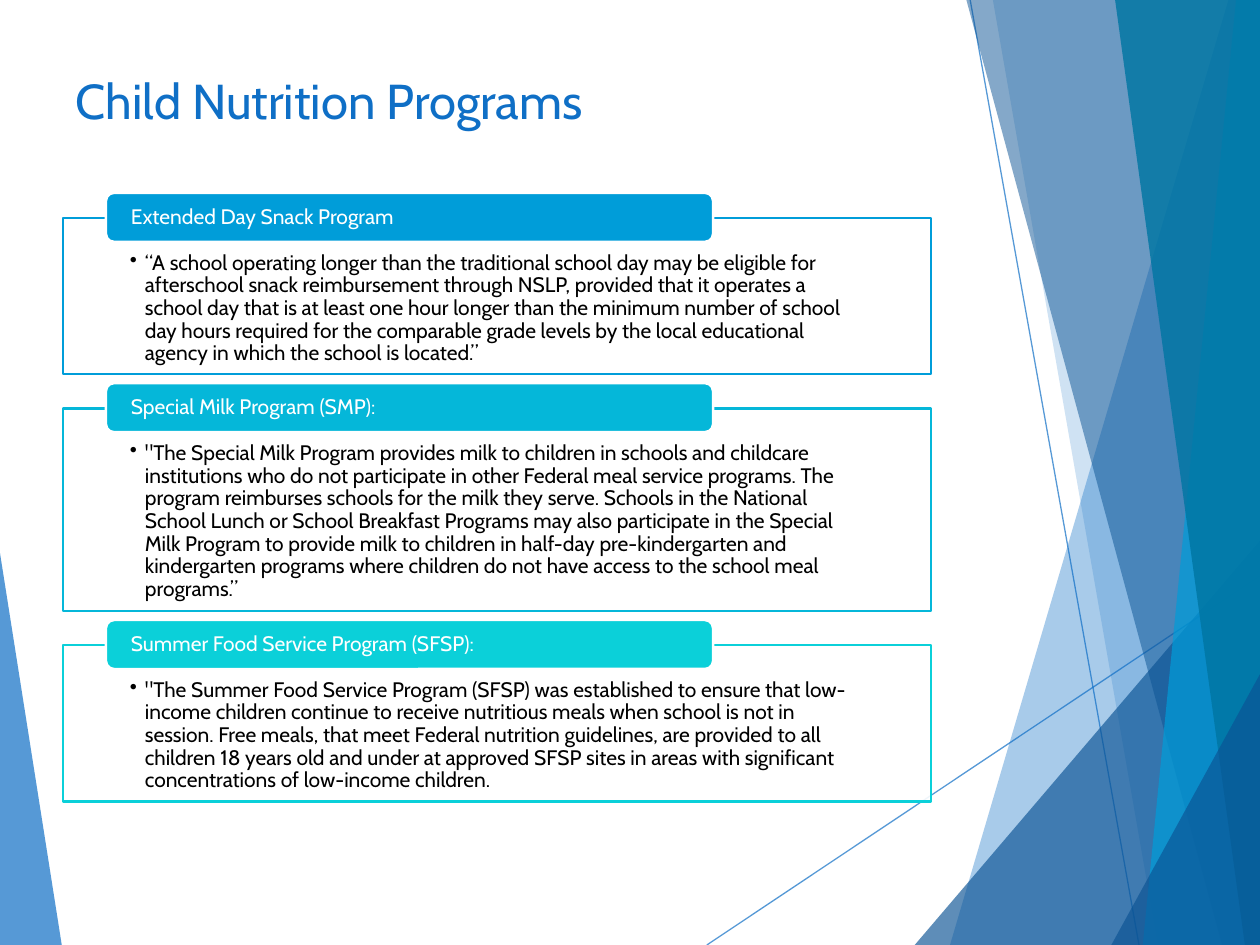
from dataclasses import dataclass

from lxml.etree import SubElement
from pptx import Presentation
from pptx.dml.color import RGBColor
from pptx.enum.shapes import MSO_CONNECTOR as Connector, MSO_SHAPE as Shape
from pptx.enum.text import MSO_ANCHOR as Anchor, PP_ALIGN as Align
from pptx.oxml.ns import qn
from pptx.util import Inches, Pt


@dataclass(frozen=True)
class Theme:
    """Colours, font and type sizes of the deck."""
    font: str = "Cabin"
    title_size: int = 28
    text_size: int = 12
    blue: str = "0F6FC6"
    navy: str = "0B5394"
    sky: str = "009DD9"
    teal: str = "0076A3"
    cyan: str = "05B7D9"
    aqua: str = "0BD0D9"
    white: str = "FFFFFF"
    black: str = "000000"


THEME = Theme()

FACETS = [
    (THEME.blue, 70, [(0, 4.39), (0.49, 7.5), (0, 7.5)]),
    (THEME.blue, 36, [(9.75, 0), (7.54, 7.5), (10, 7.5), (10, 0)]),
    (THEME.blue, 20, [(7.88, 0), (9.19, 7.5), (10, 7.5), (10, 0)]),
    (THEME.navy, 66, [(7.26, 7.5), (10, 4.29), (10, 7.5)]),
    (THEME.navy, 50, [(7.67, 0), (9.7, 7.5), (10, 7.5), (10, 0)]),
    (THEME.sky, 70, [(9.81, 0), (9.07, 7.5), (10, 7.5), (10, 0)]),
    (THEME.teal, 82, [(8.85, 0), (9.88, 7.5), (10, 7.5), (10, 0)]),
    (THEME.navy, 66, [(8.82, 7.5), (10, 5.35), (10, 7.5)]),
]
RAYS = [((5.61, 7.5), (10, 4.57)), ((7.7, 0), (9.04, 7.5))]

PROGRAMS = [
    (THEME.sky, 1.24, "Extended Day Snack Program",
     "“A school operating longer than the traditional school day may be eligible for "
     "afterschool snack reimbursement through NSLP, provided that it operates a school "
     "day that is at least one hour longer than the minimum number of school day hours "
     "required for the comparable grade levels by the local educational agency in which "
     "the school is located.”"),
    (THEME.cyan, 1.61, "Special Milk Program (SMP):",
     "\"The Special Milk Program provides milk to children in schools and childcare "
     "institutions who do not participate in other Federal meal service programs. The "
     "program reimburses schools for the milk they serve. Schools in the National School "
     "Lunch or School Breakfast Programs may also participate in the Special Milk Program "
     "to provide milk to children in half-day pre-kindergarten and kindergarten programs "
     "where children do not have access to the school meal programs.”"),
    (THEME.aqua, 1.24, "Summer Food Service Program (SFSP):",
     "\"The Summer Food Service Program (SFSP) was established to ensure that low-income "
     "children continue to receive nutritious meals when school is not in session. Free "
     "meals, that meet Federal nutrition guidelines, are provided to all children 18 years "
     "old and under at approved SFSP sites in areas with significant concentrations of "
     "low-income children."),
]


def set_alpha(fill_parent, percent):
    """Make the solid colour under an element partly transparent."""
    colour = next(fill_parent.iter(qn("a:srgbClr")))
    SubElement(colour, qn("a:alpha"), val=str(percent * 1000))


def write(frame, text, size=THEME.text_size, color=THEME.black, anchor=Anchor.MIDDLE,
          insets=(0.1, 0.05, 0.1, 0.05), spacing=None, bullet=False):
    """Write one formatted paragraph into a text frame."""
    frame.word_wrap = True
    frame.vertical_anchor = anchor
    (frame.margin_left, frame.margin_top,
     frame.margin_right, frame.margin_bottom) = map(Inches, insets)
    para = frame.paragraphs[0]
    para.alignment = Align.LEFT
    para.line_spacing = spacing
    if bullet:
        props = para._p.get_or_add_pPr()
        props.set("marL", str(Inches(0.12)))
        props.set("indent", str(-Inches(0.12)))
        SubElement(props, qn("a:buChar"), char="•")
    span = para.add_run()
    span.text = text
    span.font.name = THEME.font
    span.font.size = Pt(size)
    span.font.color.rgb = RGBColor.from_string(color)


class PageBuilder:
    """Holds the theme and the page being built."""

    def __init__(self, page, theme):
        """Keep the page and its theme."""
        self.page = page
        self.theme = theme

    def title(self, text, left, top, width, height):
        """Move and fill the title placeholder."""
        box = self.page.shapes.title
        box.left, box.top, box.width, box.height = map(Inches, (left, top, width, height))
        write(box.text_frame, text, size=self.theme.title_size, color=self.theme.blue)

    def facet(self, color, alpha, points):
        """Draw a translucent polygon."""
        corners = [(Inches(x), Inches(y)) for x, y in points]
        builder = self.page.shapes.build_freeform(*corners[0])
        builder.add_line_segments(corners[1:], close=True)
        polygon = builder.convert_to_shape()
        polygon.shadow.inherit = False
        polygon.fill.solid()
        polygon.fill.fore_color.rgb = RGBColor.from_string(color)
        set_alpha(polygon._element.spPr, alpha)
        polygon.line.fill.background()

    def ray(self, start, end):
        """Draw a thin translucent line."""
        ray = self.page.shapes.add_connector(
            Connector.STRAIGHT, *map(Inches, (*start, *end)))
        ray.line.color.rgb = RGBColor.from_string(self.theme.blue)
        ray.line.width = Pt(0.75)
        set_alpha(ray._element.spPr, 70)
        SubElement(ray._element.spPr, qn("a:effectLst"))

    def panel(self, kind, place, fill, line):
        """Draw a filled and outlined shape and return it."""
        box = self.page.shapes.add_shape(kind, *map(Inches, place))
        box.shadow.inherit = False
        box.fill.solid()
        box.fill.fore_color.rgb = RGBColor.from_string(fill)
        box.line.color.rgb = RGBColor.from_string(line)
        box.line.width = Pt(1.5)
        return box

    def program(self, top, height, color, heading, text):
        """Draw a description frame with its heading tab on the top edge."""
        white = self.theme.white
        body = self.panel(Shape.RECTANGLE, (0.5, top, 6.89, height), white, color)
        set_alpha(body.fill._xPr.find(qn("a:solidFill")), 90)
        write(body.text_frame, text, anchor=Anchor.TOP, spacing=0.9, bullet=True,
              insets=(0.53, 0.27, 0.53, 0.09))
        tab = self.panel(Shape.ROUNDED_RECTANGLE, (0.84, top - 0.2, 4.82, 0.39), color, white)
        write(tab.text_frame, heading, color=white, spacing=0.9, insets=(0.18, 0, 0.18, 0))


def main():
    """Build the deck and save it."""
    deck = Presentation()
    deck.slide_width, deck.slide_height = Inches(10), Inches(7.5)
    page = deck.slides.add_slide(deck.slide_layouts.get_by_name("Title Only"))
    builder = PageBuilder(page, THEME)
    builder.title("Child Nutrition Programs", 0.5, 0.25, 6.39, 1.08)
    for ray in RAYS:
        builder.ray(*ray)
    for facet in FACETS:
        builder.facet(*facet)
    top = 1.73
    for color, height, heading, text in PROGRAMS:
        builder.program(top, height, color, heading, text)
        top += height + 0.27
    deck.save("out.pptx")


if __name__ == "__main__":
    main()
